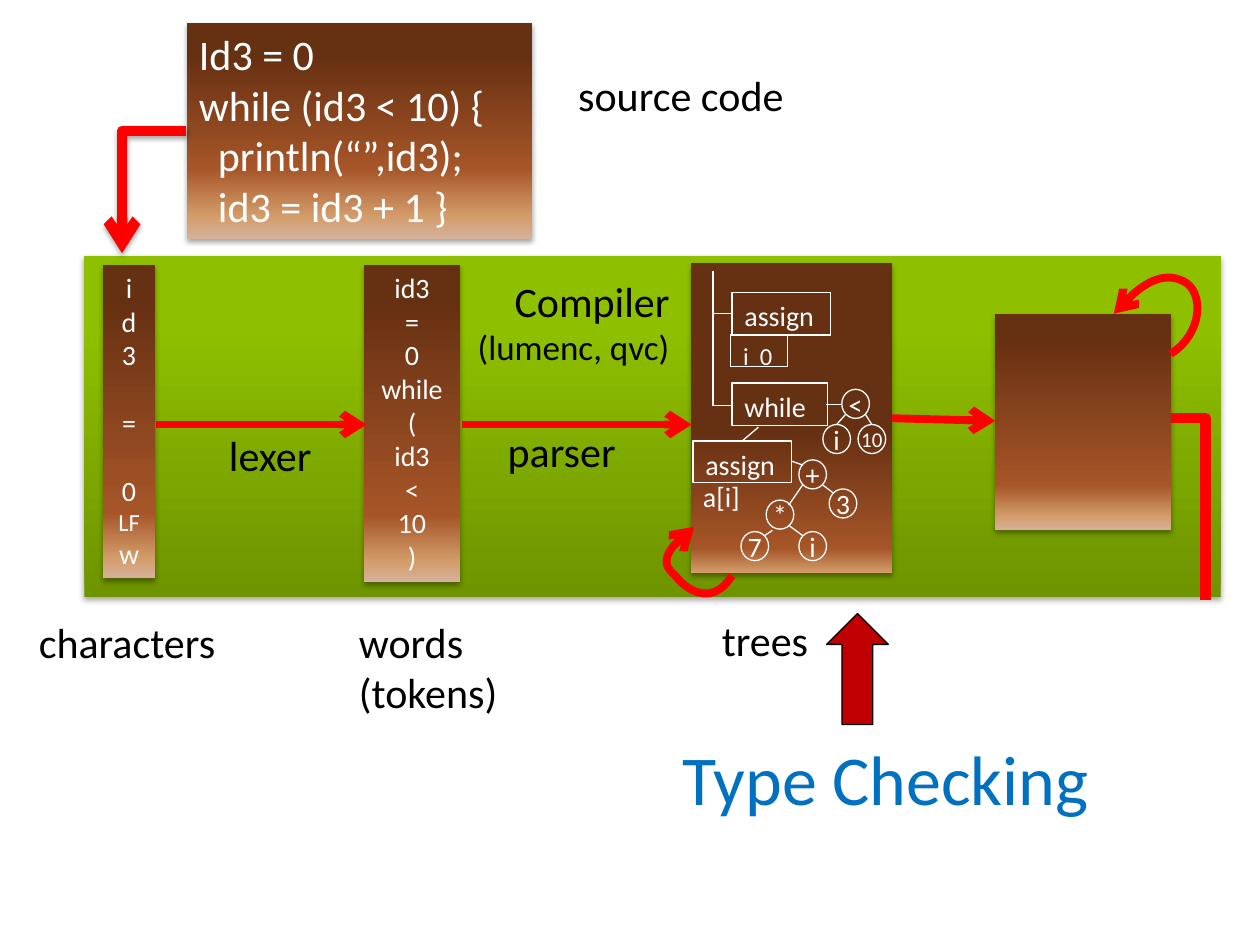
from pptx import Presentation
from pptx.dml.color import RGBColor
from pptx.enum import shapes as kinds, text as modes
from pptx.oxml import parse_xml
from pptx.util import Pt

HUES = {"black": "000000", "white": "FFFFFF", "red": "FF0000", "deep": "C00000",
        "blue": "0070C0", "sand": "D6B19C", "tan": "D49E6C", "rust": "A65528",
        "brown": "663012", "moss": "6E9400", "lime": "8FC000", "leaf": "90C100"}
EARTH = ("sand", "tan", "rust", "brown")
NS = 'xmlns:a="http://schemas.openxmlformats.org/drawingml/2006/main"'
FLAT = f"<a:effectLst {NS}/>"
SHADE = (f'<a:effectLst {NS}><a:outerShdw blurRad="40000" dist="23000" dir="5400000" '
         f'rotWithShape="0"><a:srgbClr val="{HUES["black"]}"><a:alpha val="35000"/>'
         '</a:srgbClr></a:outerShdw></a:effectLst>')
LEFT, MID, RIGHT = (modes.PP_ALIGN.LEFT, modes.PP_ALIGN.CENTER, modes.PP_ALIGN.RIGHT)


def write(frame, lines, hue, align=LEFT, wrap=True):
    """Fill a text frame; each line is (text, size) or (text, size, space after)."""
    frame.word_wrap = wrap
    frame.vertical_anchor = modes.MSO_ANCHOR.TOP
    for num, (words, size, *gap) in enumerate(lines):
        para = frame.paragraphs[0] if num == 0 else frame.add_paragraph()
        para.alignment = align
        if gap:
            para.space_after = Pt(gap[0])
        run = para.add_run()
        run.text = words
        run.font.name = "Calibri"
        run.font.size = Pt(size)
        run.font.color.rgb = RGBColor.from_string(HUES[hue])


def pen(shape, hue, width, head=False, effect=FLAT):
    """Outline a shape or connector, with an optional arrowhead and effect."""
    shape.line.color.rgb = RGBColor.from_string(HUES[hue])
    shape.line.width = Pt(width)
    props = shape._element.spPr
    if head:
        props.find("{*}ln").append(parse_xml(f'<a:tailEnd {NS} type="arrow"/>'))
    props.append(parse_xml(effect))


deck = Presentation()
deck.slide_width, deck.slide_height = Pt(720), Pt(540)
slide = deck.slides.add_slide(deck.slide_layouts[5])
draw = slide.shapes

title = draw.title
title.left, title.top, title.width, title.height = map(Pt, (383, 416.9, 250.6, 55.4))
write(title.text_frame, [("Type Checking", 40)], "blue", wrap=False)

# Shaded panels: box, gradient hues and stops, lines, alignment
code = ["Id3 = 0", "while (id3 < 10) {", "  println(“”,id3);", "  id3 = id3 + 1 }"]
chars = [("i", 16), ("d", 16), ("3", 16, 19.5), ("=", 16, 19.5), ("0", 16),
         ("LF", 14), ("w", 16)]
words = ["id3", "=", "0", "while", "(", "id3", "<", "10", ")"]
panels = [
    ((48.2, 146.2, 649.4, 195.1), ("moss", "lime", "leaf"), (0, 80, 100),
     [("Compiler", 24), ("(lumenc, qvc)", 20)], RIGHT),
    ((106.6, 13, 197.3, 123.8), EARTH, (0, 10, 33, 85),
     [(row, 24) for row in code], LEFT),
    ((59, 151.2, 29.5, 179.3), EARTH, (0, 6, 21, 89), chars, MID),
    ((208.1, 151.2, 54.7, 181.4), EARTH, (0, 6, 21, 89),
     [(row, 16) for row in words], MID),
    ((394.6, 150.5, 115.2, 177.1), EARTH, (0, 0, 8, 46), [], LEFT),
    ((568.8, 179.3, 100.1, 123.8), EARTH, (0, 6, 21, 89), [], LEFT),
]
for box, hues, stops, lines, align in panels:
    panel = draw.add_shape(kinds.MSO_SHAPE.RECTANGLE, *map(Pt, box))
    props = panel._element.spPr
    marks = "".join(f'<a:gs pos="{stop * 1000}"><a:srgbClr val="{HUES[hue]}"/></a:gs>'
                    for hue, stop in zip(hues, stops))
    props.append(parse_xml(f'<a:gradFill {NS} rotWithShape="1"><a:gsLst>{marks}</a:gsLst>'
                           '<a:lin ang="16200000" scaled="0"/></a:gradFill>'))
    panel.line.fill.background()
    props.append(parse_xml(SHADE))
    write(panel.text_frame, lines, "black" if align == RIGHT else "white", align)
    if align == RIGHT:
        panel.text_frame.margin_right = Pt(315)
        panel.text_frame.margin_top = Pt(11)

# Labels
labels = [
    ((323.3, 36, 133.2, 36), ["source code"], 24, "black"),
    ((123.8, 241.9, 61.9, 36), ["lexer"], 24, "black"),
    ((283, 239.8, 77, 36), ["parser"], 24, "black"),
    ((15.1, 348.5, 116.6, 36), ["characters"], 24, "black"),
    ((198, 348.5, 94.3, 65.5), ["words", "(tokens)"], 24, "black"),
    ((405.4, 347.8, 64.8, 36), ["trees"], 24, "black"),
    ((394.6, 270.7, 36, 26.6), ["a[i]"], 16, "white"),
]
for box, rows, size, hue in labels:
    label = draw.add_textbox(*map(Pt, box))
    write(label.text_frame, [(row, size) for row in rows], hue, wrap=False)

# Syntax tree: boxes, round nodes and branches
boxes = [("assign", 16, (418.3, 167, 56.2, 24.5)), ("while", 16, (418.3, 218.9, 54.7, 24.5)),
         ("i  0", 14, (417.6, 191.5, 32.4, 18)), ("assign", 16, (396, 252, 56.2, 23.8))]
for name, size, box in boxes:
    cell = draw.add_shape(kinds.MSO_SHAPE.RECTANGLE, *map(Pt, box))
    cell.fill.background()
    pen(cell, "white", 0.75)
    write(cell.text_frame, [(name, size)], "white")

nodes = [("+", 456.5, 262.8), ("*", 437.8, 285.8), ("3", 473.8, 279.4), ("7", 423.4, 303.8),
         ("i", 456.5, 303.8), ("<", 481, 222.5), ("i", 470.2, 242.6), ("10", 490.3, 242.6)]
for name, x, y in nodes:
    node = draw.add_shape(kinds.MSO_SHAPE.OVAL, Pt(x), Pt(y), Pt(15.8), Pt(16.6))
    node.fill.background()
    pen(node, "white", 0.75)
    frame = node.text_frame
    write(frame, [(name, 12 if name == "10" else 16)], "white", MID, wrap=False)
    frame.vertical_anchor = modes.MSO_ANCHOR.MIDDLE
    frame.margin_left = frame.margin_right = frame.margin_top = frame.margin_bottom = 0

twigs = [(407.5, 154.8, 407.5, 231.8), (418.3, 179.3, 407.5, 179.3),
         (417.6, 231.8, 407.5, 231.8), (458.6, 277.2, 450.7, 288.7),
         (441.4, 303.1, 437, 306), (470.2, 277.2, 475.9, 281.5),
         (450.7, 300.2, 458.6, 306), (424.1, 252, 433.4, 244.1),
         (452.2, 263.5, 458.6, 265.7), (483.1, 236.9, 478.1, 242.6),
         (494.6, 236.9, 498.2, 242.6), (481, 231.1, 472.3, 231.1)]
for ends in twigs:
    twig = draw.add_connector(kinds.MSO_CONNECTOR.STRAIGHT, *map(Pt, ends))
    pen(twig, "white", 0.75)

# Flow between the stages
for ends in [(89.3, 242.6, 209.5, 242.6), (264.2, 242.6, 395.3, 242.6),
             (509.8, 239, 568.8, 240.5)]:
    flow = draw.add_connector(kinds.MSO_CONNECTOR.STRAIGHT, *map(Pt, ends))
    pen(flow, "red", 4.5, head=True)

for ends, head, effect in [((106.6, 74.9, 69.8, 144.7), True, SHADE),
                           ((668.9, 239, 689, 342.7), False, FLAT)]:
    bend = draw.add_connector(kinds.MSO_CONNECTOR.ELBOW, *map(Pt, ends))
    bend._element.spPr.find("{*}prstGeom").set("prst", "bentConnector2")
    pen(bend, "red", 6, head, effect)

# Looping arrows: two cubic curves each, joined at the fourth point
loops = [
    [(668.9, 202.3), (687.6, 190.8), (688.3, 166.3), (676.1, 160.6),
     (663.8, 154.8), (651.6, 162), (636.5, 179.3)],
    [(418.3, 329), (406.1, 348.5), (390.2, 334.8), (386.6, 329.8),
     (383, 325.4), (371.5, 320.4), (396.7, 301)],
]
STEPS = 16
for knots in loops:
    trail = []
    for part in (knots[:4], knots[3:]):
        for step in range(1, STEPS + 1):
            t = step / STEPS
            mix = ((1 - t) ** 3, 3 * t * (1 - t) ** 2, 3 * t * t * (1 - t), t ** 3)
            trail.append([Pt(sum(m * knot[axis] for m, knot in zip(mix, part)))
                          for axis in (0, 1)])
    curve = draw.build_freeform(*map(Pt, knots[0]))
    curve.add_line_segments(trail, close=False)
    loop = curve.convert_to_shape()
    loop.fill.background()
    pen(loop, "red", 4.5, head=True)

# Pointer from the title to the trees
arrow = draw.add_shape(kinds.MSO_SHAPE.UP_ARROW, *map(Pt, (472.3, 350.6, 35.3, 63.4)))
arrow.fill.solid()
arrow.fill.fore_color.rgb = RGBColor.from_string(HUES["deep"])
pen(arrow, "black", 0.75)

deck.save("out.pptx")
